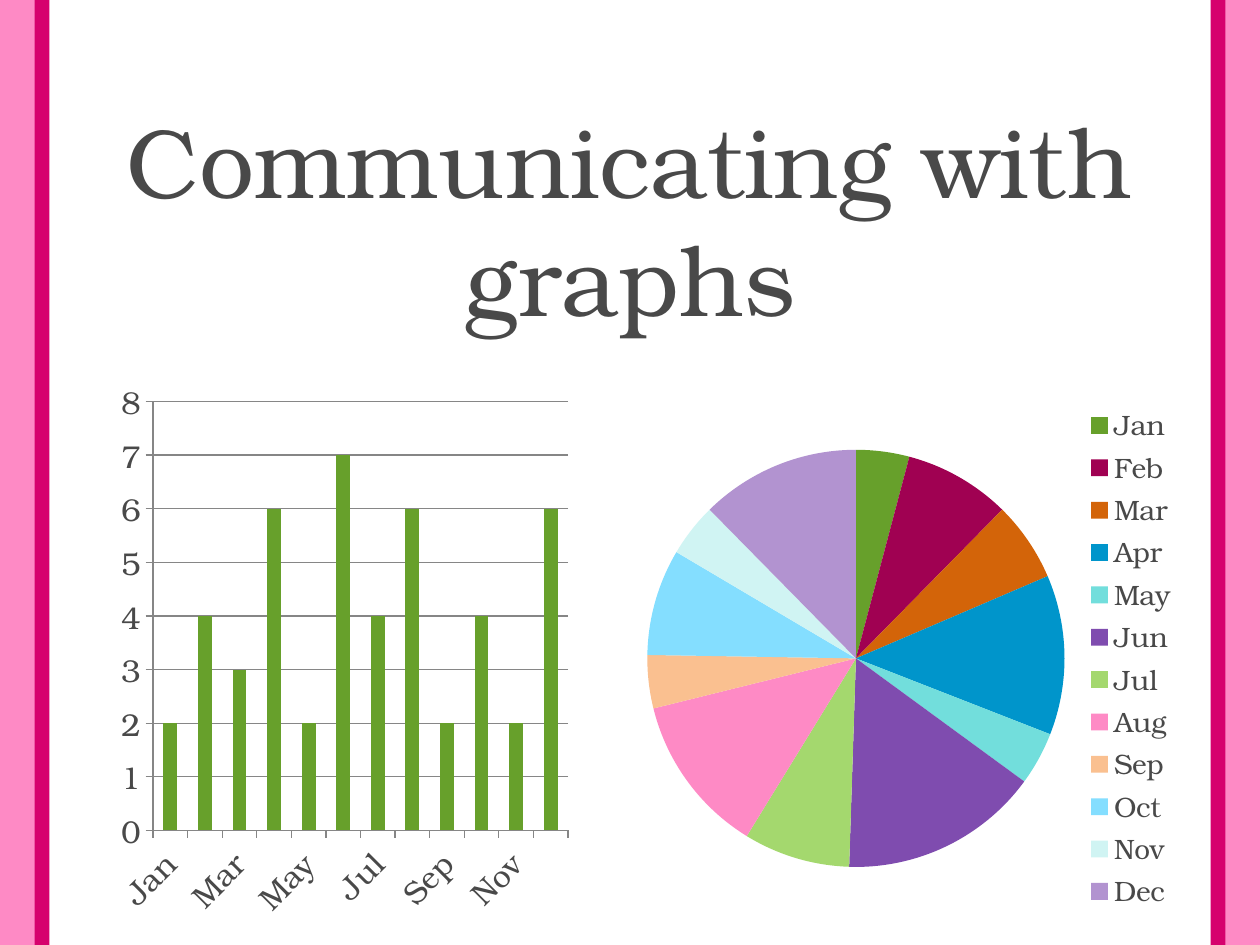
from pptx import Presentation, util as u
from pptx.chart.data import CategoryChartData
from pptx.dml.color import RGBColor
from pptx.enum import chart as ch, shapes, text

TITLE = "Communicating with graphs"
FONT = "TeX Gyre Bonum"
MONTHS = ["Jan", "Feb", "Mar", "Apr", "May", "Jun",
          "Jul", "Aug", "Sep", "Oct", "Nov", "Dec"]
COLUMN_VALUES = [2, 4, 3, 6, 2, 7, 4, 6, 2, 4, 2, 6]
PIE_VALUES = [4, 8, 6, 12, 4, 15, 8, 12, 4, 8, 4, 12]
COLORS = {"border": "D6026D", "backdrop": "FE8AC5", "panel": "FFFFFF",
          "text": "494949", "columns": "67A02B", "axis": "868686"}
SLICE_COLORS = ["67A02B", "A00152", "D36409", "0095CB", "72DEDC", "7F4CAF",
                "A4D86E", "FE8AC5", "FAC090", "84DEFF", "D0F4F3", "B293D0"]

# left, top, width, height in points
PANEL_BOX = (24, -156, 672, 840)
TITLE_BOX = (60, 53, 600, 143.5)
COLUMN_BOX = (60, 211, 270, 320)
PIE_BOX = (360, 207.5, 320, 337.5)


def rgb(name):
    return RGBColor.from_string(COLORS[name])


def points(box):
    return [u.Pt(length) for length in box]


def apply(target, **values):
    for name, value in values.items():
        setattr(target, name, value)


def paint(fill, color):
    fill.solid()
    fill.fore_color.rgb = color


def style_font(font, size):
    apply(font, name=FONT, size=u.Pt(size), bold=False)
    font.color.rgb = rgb("text")


def add_month_chart(slide, kind, box, values):
    data = CategoryChartData()
    data.categories = MONTHS
    data.add_series("Series 1", values)
    chart = slide.shapes.add_chart(kind, *points(box), data).chart
    apply(chart, has_title=False, has_legend=False)
    style_font(chart.font, 18)
    return chart


def main():
    prs = Presentation()
    apply(prs, slide_width=u.Pt(720), slide_height=u.Pt(540))
    slide = prs.slides.add_slide(prs.slide_layouts[5])
    paint(slide.background.fill, rgb("backdrop"))

    panel = slide.shapes.add_shape(
        shapes.MSO_SHAPE.ROUNDED_RECTANGLE, *points(PANEL_BOX))
    panel.shadow.inherit = False
    paint(panel.fill, rgb("panel"))
    panel.line.color.rgb = rgb("border")
    panel.line.width = u.Pt(8.5)

    title = slide.shapes.title
    title.element.addprevious(panel.element)  # panel goes behind the title
    apply(title, **dict(zip(("left", "top", "width", "height"),
                            points(TITLE_BOX))))
    title.text_frame.text = TITLE
    apply(title.text_frame, word_wrap=True,
          auto_size=text.MSO_AUTO_SIZE.SHAPE_TO_FIT_TEXT,
          vertical_anchor=text.MSO_ANCHOR.MIDDLE)
    heading = title.text_frame.paragraphs[0]
    heading.alignment = text.PP_ALIGN.CENTER
    style_font(heading.runs[0].font, 56)

    columns = add_month_chart(slide, ch.XL_CHART_TYPE.COLUMN_CLUSTERED,
                              COLUMN_BOX, COLUMN_VALUES)
    apply(columns.plots[0], gap_width=150, vary_by_categories=False)
    paint(columns.plots[0].series[0].format.fill, rgb("columns"))
    apply(columns.value_axis, minimum_scale=0, maximum_scale=8, major_unit=1,
          has_major_gridlines=True)
    for axis in (columns.category_axis, columns.value_axis):
        axis.major_tick_mark = ch.XL_TICK_MARK.OUTSIDE
    for part in (columns.category_axis, columns.value_axis,
                 columns.value_axis.major_gridlines):
        part.format.line.color.rgb = rgb("axis")
        part.format.line.width = u.Pt(0.75)

    pie = add_month_chart(slide, ch.XL_CHART_TYPE.PIE, PIE_BOX, PIE_VALUES)
    pie.plots[0].vary_by_categories = True
    for index, color in enumerate(SLICE_COLORS):
        paint(pie.plots[0].series[0].points[index].format.fill,
              RGBColor.from_string(color))
    pie.has_legend = True
    apply(pie.legend, position=ch.XL_LEGEND_POSITION.RIGHT,
          include_in_layout=False)
    style_font(pie.legend.font, 16)

    prs.save("out.pptx")


if __name__ == "__main__":
    main()
